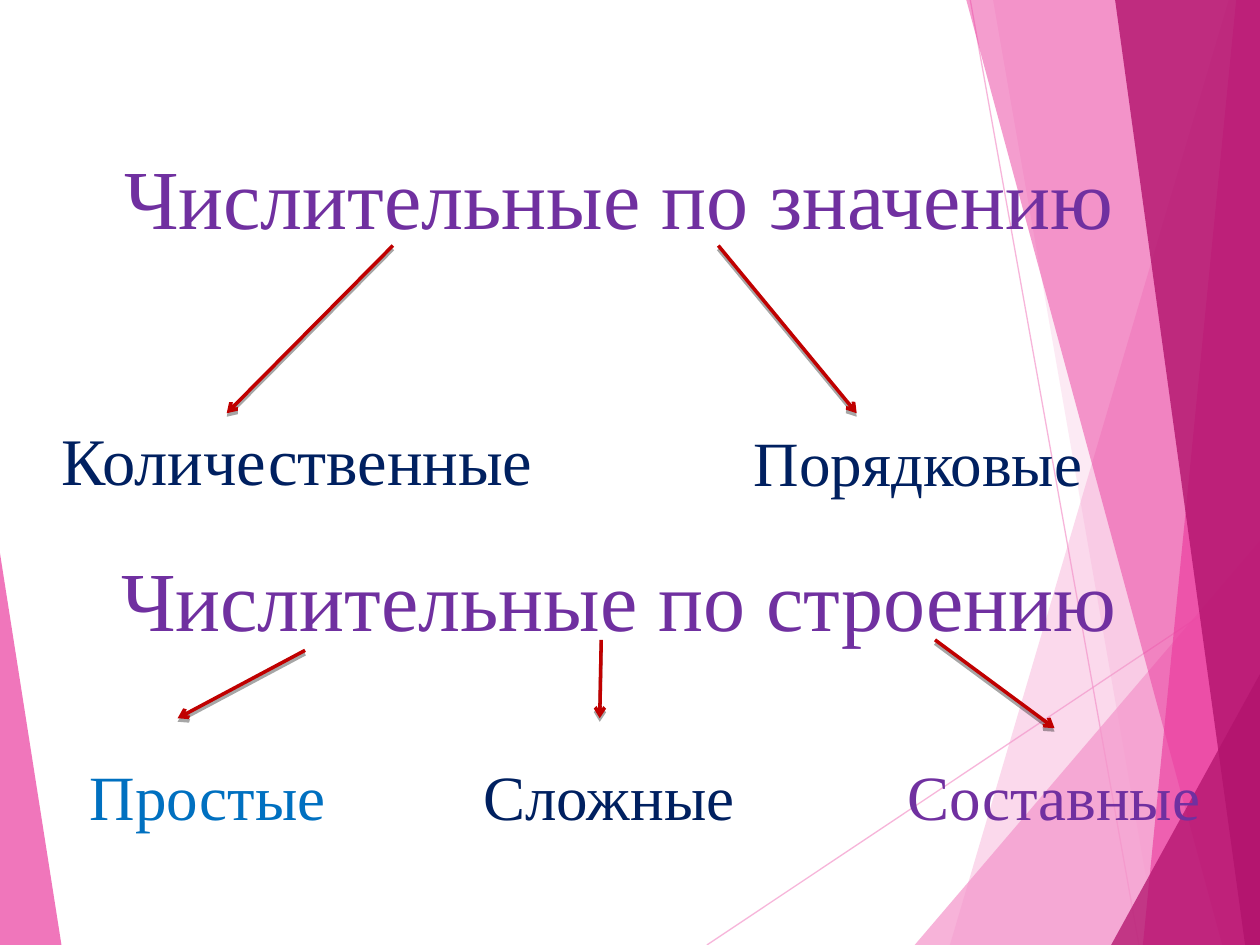
import dataclasses

import pptx
import pptx.dml.color
import pptx.enum.shapes
import pptx.enum.text
import pptx.oxml
import pptx.oxml.ns
import pptx.util

Cm = pptx.util.Cm
Pt = pptx.util.Pt


@dataclasses.dataclass(frozen=True)
class Theme:
    """Colours and type sizes of the deck."""
    font: str = "Times New Roman"
    heading_size: int = 48
    label_size: int = 36
    large_label_size: int = 38
    purple: str = "7030A0"
    navy: str = "002060"
    blue: str = "0070C0"
    arrow: str = "C00000"
    light_pink: str = "F496CB"
    pink: str = "EB3D9F"
    dark_pink: str = "B2136D"


@dataclasses.dataclass(frozen=True)
class Box:
    """A region of the page in centimetres."""
    left: float
    top: float
    width: float
    height: float

    def place(self, x, y):
        """Return page lengths for a point inside the region."""
        return Cm(self.left + x), Cm(self.top + y)


@dataclasses.dataclass(frozen=True)
class Branch:
    """A category with its arrow and label centre."""
    text: str
    color: str
    size: int
    center: float
    width: float
    tail: tuple
    tip: tuple


THEME = Theme()


def set_attributes(target, values):
    """Set every named value on the target."""
    for name, value in values.items():
        setattr(target, name, value)


def rgb(value):
    """Turn a hex string into a colour."""
    return pptx.dml.color.RGBColor.from_string(value)


def xml(tag, content="", **attributes):
    """Make one drawing element."""
    listed = " ".join(f'{name}="{value}"' for name, value in attributes.items())
    return pptx.oxml.parse_xml(
        f'<a:{tag} {pptx.oxml.ns.nsdecls("a")} {listed}>{content}</a:{tag}>')


def set_opacity(shape, percent):
    """Make the shape's colours partly transparent."""
    for color in shape._element.spPr.iter(pptx.oxml.ns.qn("a:srgbClr")):
        color.append(xml("alpha", val=percent * 1000))


def add_line(page, start, end, color, width):
    """Draw a straight line without effects."""
    line = page.shapes.add_connector(
        pptx.enum.shapes.MSO_CONNECTOR.STRAIGHT, *start, *end)
    line.line.color.rgb = rgb(color)
    line.line.width = Pt(width)
    line._element.spPr.append(xml("effectLst"))
    return line


def add_arrow(page, start, end):
    """Draw a red arrow with a soft shadow below it."""
    arrow = add_line(page, start, end, THEME.arrow, 2)
    arrow.line._get_or_add_ln().append(xml("tailEnd", type="arrow"))
    shade = '<a:srgbClr val="000000"><a:alpha val="35000"/></a:srgbClr>'
    arrow._element.spPr[-1].append(
        xml("outerShdw", shade, blurRad=0, dist=Pt(2), dir=5400000, rotWithShape=0))


def add_text(page, box, text, size, color):
    """Write one centred line standing on the bottom of its box."""
    area = page.shapes.add_textbox(
        *box.place(0, 0), Cm(box.width), Cm(box.height))
    set_attributes(area.text_frame, {
        "word_wrap": True, "margin_left": 0, "margin_right": 0,
        "margin_top": 0, "margin_bottom": 0,
        "vertical_anchor": pptx.enum.text.MSO_ANCHOR.BOTTOM})
    para = area.text_frame.paragraphs[0]
    para.alignment = pptx.enum.text.PP_ALIGN.CENTER
    span = para.add_run()
    span.text = text
    set_attributes(span.font, {"name": THEME.font, "size": Pt(size)})
    span.font.color.rgb = rgb(color)


def add_facet(page, box, start, end, side, color, opacity):
    """Fill the area between a slanted edge and a vertical side."""
    corners = [start, end, (side, end[1]), (side, start[1])]
    points = [box.place(*corner) for corner in corners]
    builder = page.shapes.build_freeform(*points[0])
    builder.add_line_segments(points[1:], close=True)
    facet = builder.convert_to_shape()
    facet.shadow.inherit = False
    facet.fill.solid()
    facet.fill.fore_color.rgb = rgb(color)
    facet.line.fill.background()
    set_opacity(facet, opacity)


def draw_backdrop(page, box):
    """Draw the fine lines and the translucent facets."""
    right, bottom = box.width, box.height
    for start, end in (((14.25, bottom), (right, 11.61)),
                       ((19.56, 0), (22.96, bottom))):
        line = add_line(page, box.place(*start), box.place(*end),
                        THEME.light_pink, 0.75)
        set_opacity(line, 70)
    facets = (
        ((24.77, 0), 19.15, right, THEME.light_pink, 36),
        ((20.02, 0), 23.34, right, THEME.light_pink, 20),
        ((right, 10.9), 18.44, right, THEME.light_pink, 72),
        ((19.48, 0), 24.64, right, THEME.pink, 50),
        ((24.92, 0), 23.04, right, THEME.pink, 66),
        ((22.48, 0), 25.1, right, THEME.dark_pink, 80),
        ((right, 13.59), 22.4, right, THEME.dark_pink, 76),
        ((0, 11.15), 1.24, 0, THEME.pink, 70),
    )
    for start, foot, side, color, opacity in facets:
        add_facet(page, box, start, (foot, bottom), side, color, opacity)


def draw_classification(page, box, heading, branches):
    """Draw a heading with arrows down to its categories."""
    add_text(page, Box(box.left, box.top, box.width, 1.88),
             heading, THEME.heading_size, THEME.purple)
    label_height = 1.5
    for branch in branches:
        add_arrow(page, box.place(*branch.tail), box.place(*branch.tip))
        label = Box(box.left + branch.center - branch.width / 2,
                    box.top + box.height - label_height,
                    branch.width, label_height)
        add_text(page, label, branch.text, branch.size, branch.color)


def main():
    """Build and save the deck."""
    deck = pptx.Presentation()
    whole = Box(0, 0, 25.4, 19.05)
    set_attributes(deck, {"slide_width": Cm(whole.width),
                          "slide_height": Cm(whole.height)})
    page = deck.slides.add_slide(deck.slide_layouts[6])
    draw_backdrop(page, whole)
    draw_classification(page, Box(1.24, 3.09, 22.48, 6.97), "Числительные по значению", (
        Branch("Количественные", THEME.navy, THEME.large_label_size,
               4.75, 10, (6.68, 1.86), (3.33, 5.24)),
        Branch("Порядковые", THEME.navy, THEME.label_size,
               17.27, 7.2, (13.24, 1.86), (16.03, 5.24)),
    ))
    draw_classification(page, Box(1.24, 11.2, 22.48, 5.6), "Числительные по строению", (
        Branch("Простые", THEME.blue, THEME.label_size,
               2.95, 5.6, (4.91, 1.91), (2.34, 3.28)),
        Branch("Сложные", THEME.navy, THEME.label_size,
               11.04, 5.6, (10.88, 1.7), (10.85, 3.28)),
        Branch("Составные", THEME.purple, THEME.label_size,
               20.01, 6.6, (17.61, 1.7), (20.02, 3.48)),
    ))
    deck.save("out.pptx")


if __name__ == "__main__":
    main()
